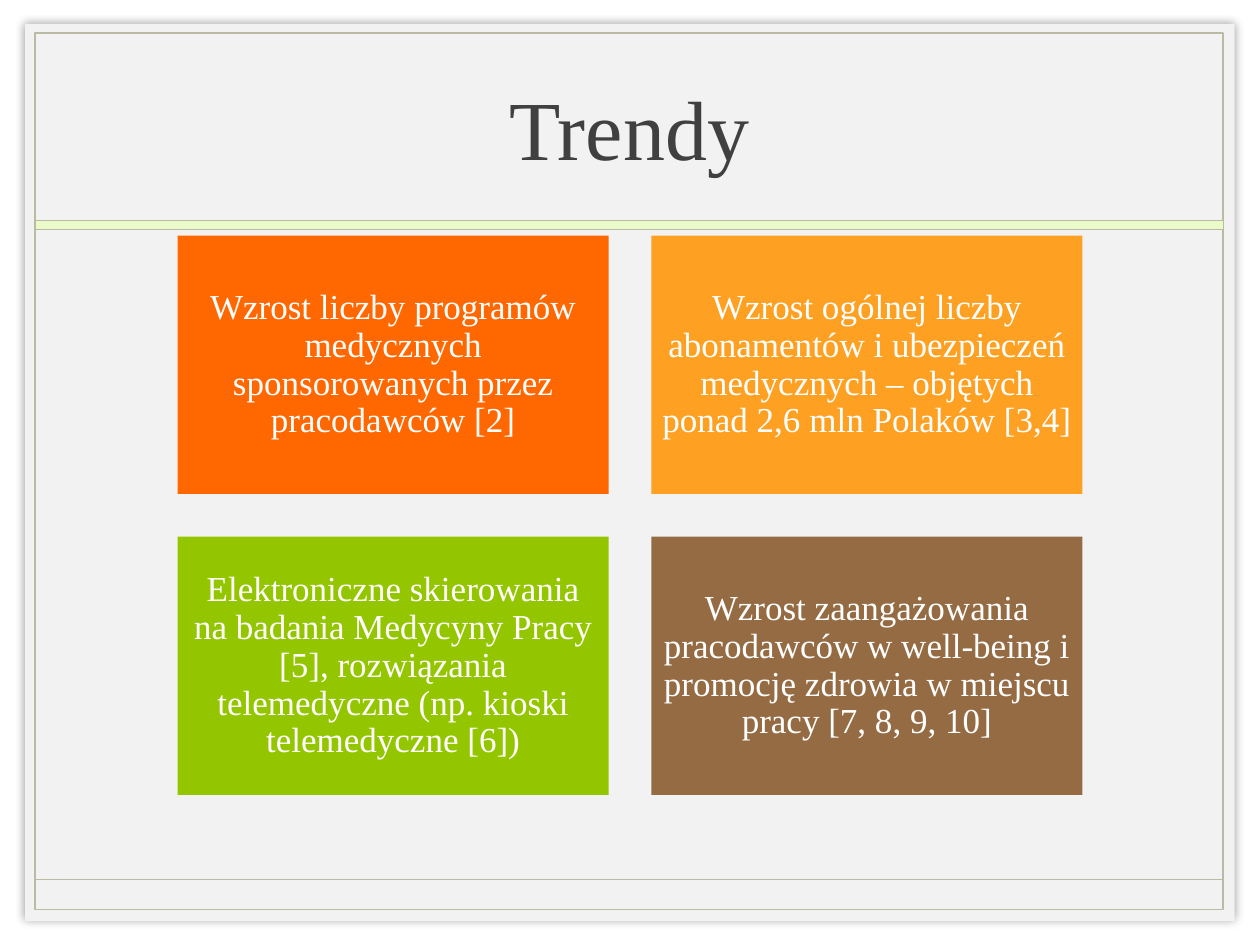
from dataclasses import dataclass

from lxml.etree import SubElement
from pptx import Presentation
from pptx.dml.color import RGBColor as RGB
from pptx.enum.shapes import MSO_CONNECTOR as CONN, MSO_SHAPE as SHAPE
from pptx.enum.text import MSO_ANCHOR as ANCHOR, MSO_AUTO_SIZE as AUTO, PP_ALIGN as ALIGN
from pptx.oxml.ns import qn
from pptx.shapes.autoshape import Shape
from pptx.shapes.connector import Connector
from pptx.slide import Slide
from pptx.text.text import TextFrame
from pptx.util import Inches, Pt


@dataclass(frozen=True)
class Theme:
    font: str = "Times New Roman"
    title_size: float = 48
    card_size: float = 20
    ink: str = "404040"
    white: str = "FFFFFF"
    page: str = "F2F2F2"
    rule: str = "BBBAA2"
    band: str = "EAFAC9"


@dataclass(frozen=True)
class Box:
    left: float
    top: float
    width: float
    height: float

    def lengths(self) -> list[Inches]:
        return [Inches(v) for v in (self.left, self.top, self.width, self.height)]


@dataclass(frozen=True)
class Card:
    text: str
    fill: str


THEME = Theme()
PAGE = Box(0.2, 0.19, 9.6, 7.12)
FRAME = Box(0.28, 0.26, 9.43, 6.96)
BAND = Box(0.28, 1.75, 9.43, 0.07)
TITLE = Box(0.98, 0.27, 8.03, 1.47)
FIRST_CARD = Box(1.41, 1.87, 3.42, 2.05)
FOOTER_Y = 6.98
GAP = 0.34
COLUMNS = 2
CARDS = [
    Card("Wzrost liczby programów medycznych sponsorowanych przez pracodawców [2]", "FF6700"),
    Card("Wzrost ogólnej liczby abonamentów i ubezpieczeń medycznych – objętych "
         "ponad 2,6 mln Polaków [3,4]", "FEA022"),
    Card("Elektroniczne skierowania na badania Medycyny Pracy [5], rozwiązania "
         "telemedyczne (np. kioski telemedyczne [6])", "94C600"),
    Card("Wzrost zaangażowania pracodawców w well-being i promocję zdrowia "
         "w miejscu pracy [7, 8, 9, 10]", "956B43"),
]


def add_rect(s: Slide, box: Box, fill: str | None = None, line_width: float = 0) -> Shape:
    """Draw a rectangle with an optional fill and rule-coloured outline."""
    sp = s.shapes.add_shape(SHAPE.RECTANGLE, *box.lengths())
    sp.shadow.inherit = False
    if fill:
        sp.fill.solid()
        sp.fill.fore_color.rgb = RGB.from_string(fill)
    else:
        sp.fill.background()
    if line_width:
        sp.line.color.rgb = RGB.from_string(THEME.rule)
        sp.line.width = Pt(line_width)
    else:
        sp.line.fill.background()
    return sp


def add_glow_shadow(sp: Shape) -> None:
    """Give a shape a soft shadow on all sides."""
    effects = sp.element.spPr.find(qn("a:effectLst"))
    shadow = SubElement(effects, qn("a:outerShdw"), blurRad=str(Pt(5)), dist="0",
                        dir="0", algn="ctr", rotWithShape="0")
    color = SubElement(shadow, qn("a:srgbClr"), val="000000")
    SubElement(color, qn("a:alpha"), val="40000")


def add_rule(s: Slide, left: float, right: float, y: float) -> Connector:
    """Draw a thin horizontal rule."""
    line = s.shapes.add_connector(CONN.STRAIGHT, Inches(left), Inches(y), Inches(right), Inches(y))
    line.line.color.rgb = RGB.from_string(THEME.rule)
    line.line.width = Pt(1)
    SubElement(line.element.spPr, qn("a:effectLst"))
    return line


def write(tf: TextFrame, text: str, size: float, color: str, spacing: float = 1.0) -> None:
    """Write one centred paragraph in the theme font."""
    tf.word_wrap = True
    tf.auto_size = AUTO.NONE
    tf.vertical_anchor = ANCHOR.MIDDLE
    p = tf.paragraphs[0]
    p.alignment = ALIGN.CENTER
    p.line_spacing = spacing
    r = p.add_run()
    r.text = text
    r.font.name = THEME.font
    r.font.size = Pt(size)
    r.font.color.rgb = RGB.from_string(color)


def add_page(s: Slide) -> None:
    """Draw the framed page behind the content."""
    add_glow_shadow(add_rect(s, PAGE, THEME.page))
    add_rect(s, FRAME, line_width=1)
    add_rule(s, FRAME.left, FRAME.left + FRAME.width, FOOTER_Y)
    add_rect(s, BAND, THEME.band, 0.25)


def add_title(s: Slide, text: str) -> None:
    """Fill the title placeholder and bring it in front of the page."""
    sp = s.shapes.title
    sp.left, sp.top, sp.width, sp.height = TITLE.lengths()
    write(sp.text_frame, text, THEME.title_size, THEME.ink)
    sp.element.getparent().append(sp.element)


def add_card(s: Slide, card: Card, index: int) -> None:
    """Draw a card at its place in the grid."""
    row, col = divmod(index, COLUMNS)
    w, h = FIRST_CARD.width, FIRST_CARD.height
    box = Box(FIRST_CARD.left + col * (w + GAP), FIRST_CARD.top + row * (h + GAP), w, h)
    tf = add_rect(s, box, card.fill).text_frame
    tf.margin_left = tf.margin_right = tf.margin_top = tf.margin_bottom = Inches(0.08)
    write(tf, card.text, THEME.card_size, THEME.white, 0.9)


def main() -> None:
    """Build and save the slide."""
    prs = Presentation()
    prs.slide_width, prs.slide_height = Inches(10), Inches(7.5)
    s = prs.slides.add_slide(prs.slide_layouts[5])
    add_page(s)
    add_title(s, "Trendy")
    for i, card in enumerate(CARDS):
        add_card(s, card, i)
    prs.save("out.pptx")


if __name__ == "__main__":
    main()
